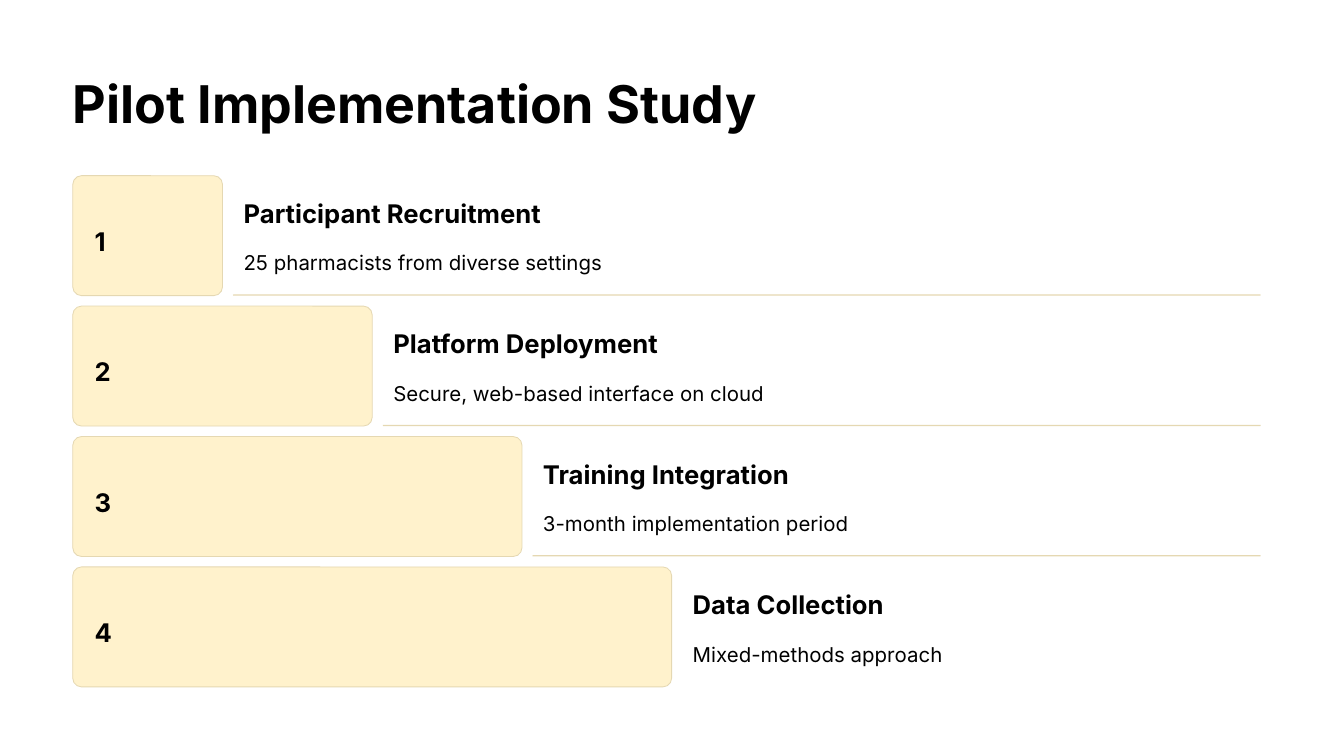
import pptx
import pptx.dml.color
import pptx.enum.shapes
import pptx.util

Pt = pptx.util.Pt

TITLE = "Pilot Implementation Study"
# heading, heading width, detail, detail width
STEPS = [
    ("Participant Recruitment", 215, "25 pharmacists from diverse settings", 261),
    ("Platform Deployment", 192, "Secure, web-based interface on cloud", 290),
    ("Training Integration", 186, "3-month implementation period", 222),
    ("Data Collection", 181, "Mixed-methods approach", 181),
]

THEME = {
    "font": "Inter",
    "text": "000000",
    "bar": "FFF2CC",
    "edge": "E5D8B2",
    # size, line spacing, bold
    "title": (37.1, 46.2, True),
    "number": (18.3, 29.6, True),
    "heading": (18.3, 22.9, True),
    "detail": (14.6, 23.8, False),
}

LEFT, RIGHT = 52, 900.5
FIRST_TOP, ROW_PITCH = 125.5, 93.15
BAR_HEIGHT, BAR_STEP = 85.7, 106.95
RULE_GAP, TEXT_GAP = 7.5, 15


def color(name):
    return pptx.dml.color.RGBColor.from_string(THEME[name])


def add_text(slide, text, style, left, top, width, height):
    size, spacing, bold = THEME[style]
    frame = slide.shapes.add_textbox(Pt(left), Pt(top), Pt(width), Pt(height)).text_frame
    frame.margin_left = frame.margin_right = frame.margin_top = frame.margin_bottom = 0
    frame.word_wrap = False
    paragraph = frame.paragraphs[0]
    paragraph.text = text
    paragraph.line_spacing = Pt(spacing)
    paragraph.font.name = THEME["font"]
    paragraph.font.size = Pt(size)
    paragraph.font.bold = bold
    paragraph.font.color.rgb = color("text")


def add_rounded(slide, left, top, width, height, rounding, fill):
    panel = slide.shapes.add_shape(
        pptx.enum.shapes.MSO_SHAPE.ROUNDED_RECTANGLE,
        Pt(left), Pt(top), Pt(width), Pt(height))
    panel.adjustments[0] = rounding
    panel.shadow.inherit = False
    panel.fill.solid()
    panel.fill.fore_color.rgb = color(fill)
    panel.line.fill.background()
    return panel


def add_step(slide, index, step):
    heading, heading_width, detail, detail_width = step
    top = FIRST_TOP + index * ROW_PITCH
    bar_width = (index + 1) * BAR_STEP
    bar_right = LEFT + bar_width

    bar = add_rounded(slide, LEFT, top, bar_width, BAR_HEIGHT, 0.073, "bar")
    bar.line.color.rgb = color("edge")
    bar.line.width = Pt(0.6)

    add_text(slide, str(index + 1), "number", LEFT + 15.7, top + 28.1, 14, 29.6)
    text_left = bar_right + TEXT_GAP
    add_text(slide, heading, "heading", text_left, top + 14.8, heading_width, 22.9)
    add_text(slide, detail, "detail", text_left, top + 47.2, detail_width, 23.8)

    if index < len(STEPS) - 1:
        rule_left = bar_right + RULE_GAP
        add_rounded(slide, rule_left, top + 84.8, RIGHT - rule_left, 0.9, 0.5, "edge")


def main():
    deck = pptx.Presentation()
    deck.slide_width, deck.slide_height = Pt(960), Pt(540)
    slide = deck.slides.add_slide(deck.slide_layouts[6])
    add_text(slide, TITLE, "title", LEFT, 49.4, 500, 46.8)
    for index, step in enumerate(STEPS):
        add_step(slide, index, step)
    deck.save("out.pptx")


if __name__ == "__main__":
    main()
